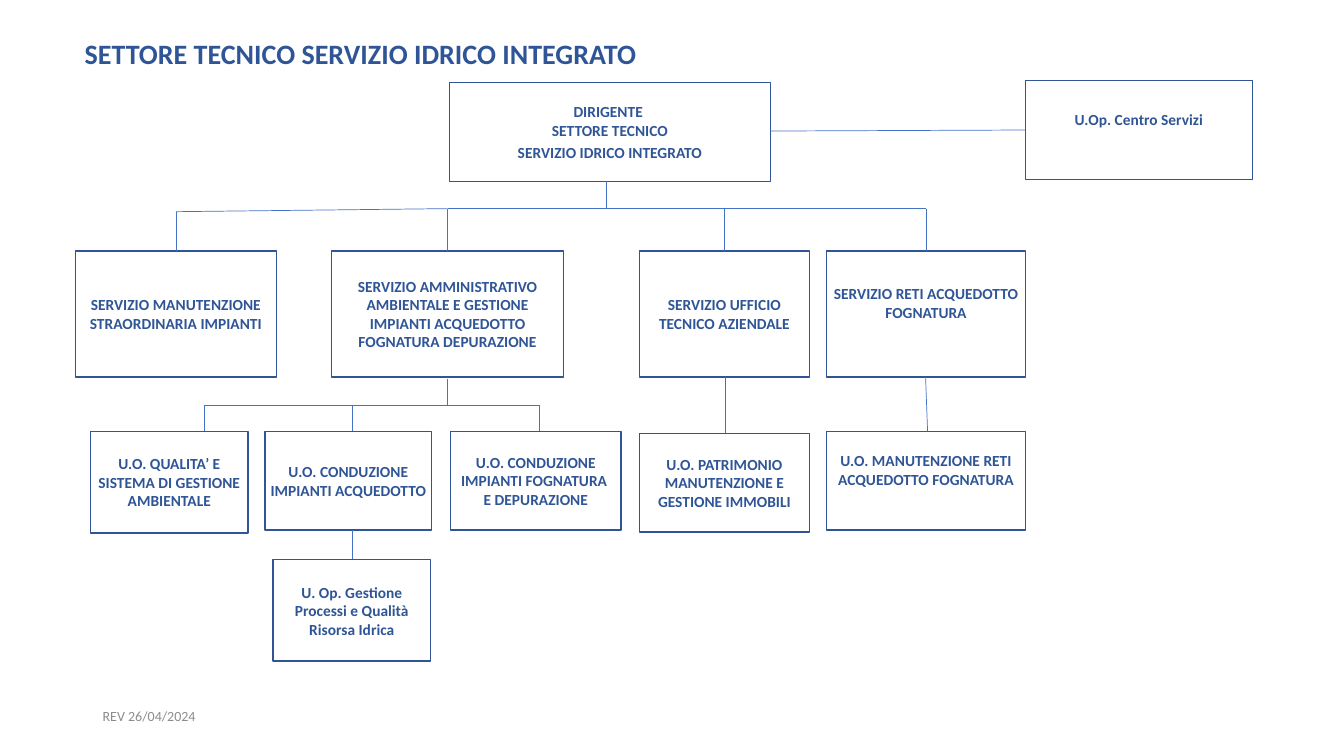
from dataclasses import dataclass

from pptx import Presentation
from pptx.dml.color import RGBColor
from pptx.enum.shapes import MSO_CONNECTOR as Connector, MSO_SHAPE as Shape
from pptx.enum.text import MSO_ANCHOR as Anchor, MSO_AUTO_SIZE as AutoSize, PP_ALIGN as Align
from pptx.oxml.ns import qn
from pptx.util import Inches, Pt


@dataclass(frozen=True)
class Theme:
    font: str = "Calibri"
    blue: RGBColor = RGBColor(0x2F, 0x55, 0x97)
    link: RGBColor = RGBColor(0x44, 0x72, 0xC4)
    grey: RGBColor = RGBColor(0x8C, 0x8C, 0x8C)
    white: RGBColor = RGBColor(0xFF, 0xFF, 0xFF)
    title_size: Pt = Pt(20)
    box_size: Pt = Pt(11)
    note_size: Pt = Pt(10)
    box_line: Pt = Pt(1)
    link_line: Pt = Pt(0.5)


THEME = Theme()
INSET = 0.05
RAISED = 0.27  # bottom inset that lifts the text above the middle


def set_values(target, values):
    for name, value in values.items():
        setattr(target, name, value)


def set_margins(frame, left, top, right, bottom):
    set_values(frame, {"margin_left": Inches(left), "margin_top": Inches(top),
                       "margin_right": Inches(right), "margin_bottom": Inches(bottom)})


def write(frame, text, size, color, bold=True, align=Align.LEFT, after=0):
    set_values(frame, {"text": text, "word_wrap": True,
                       "auto_size": AutoSize.NONE, "vertical_anchor": Anchor.MIDDLE})
    for paragraph in frame.paragraphs:
        set_values(paragraph, {"alignment": align, "space_after": Pt(after)})
        for run in paragraph.runs:
            set_values(run.font, {"name": THEME.font, "size": size, "bold": bold})
            run.font.color.rgb = color


def add_box(slide, box, text, bottom=INSET):
    shape = slide.shapes.add_shape(Shape.RECTANGLE, *map(Inches, box))
    shape.shadow.inherit = False
    shape.fill.solid()
    shape.fill.fore_color.rgb = THEME.white
    shape.line.color.rgb = THEME.blue
    shape.line.width = THEME.box_line
    write(shape.text_frame, text, THEME.box_size, THEME.blue, align=Align.CENTER, after=3)
    set_margins(shape.text_frame, INSET, INSET, INSET, bottom)


def add_link(slide, *ends):
    link = slide.shapes.add_connector(Connector.STRAIGHT, *map(Inches, ends))
    link.line.color.rgb = THEME.link
    link.line.width = THEME.link_line
    properties = link._element.spPr
    properties.append(properties.makeelement(qn("a:effectLst"), {}))


def add_title(slide, box):
    title = slide.shapes.title
    set_values(title, dict(zip(("left", "top", "width", "height"), map(Inches, box))))
    write(title.text_frame, "SETTORE TECNICO SERVIZIO IDRICO INTEGRATO",
          THEME.title_size, THEME.blue)
    set_margins(title.text_frame, 0.09, 0, 0, 0)


def add_management(slide, box):
    left, top, width, height = box
    add_box(slide, (left, top + 0.02, 3.18, height),
            "DIRIGENTE \vSETTORE TECNICO\nSERVIZIO IDRICO INTEGRATO")
    centre_left = left + width - 2.25
    add_box(slide, (centre_left, top, 2.25, height), "U.Op. Centro Servizi", RAISED)
    add_link(slide, left + 3.18, top + 0.5, centre_left, top + 0.49)


def add_services(slide, box):
    left, top, width, height = box
    bus = top - 0.42
    services = [  # offset, width, bottom inset, text
        (0, 1.99, INSET, "SERVIZIO MANUTENZIONE STRAORDINARIA IMPIANTI"),
        (2.54, 2.3, INSET, "SERVIZIO AMMINISTRATIVO AMBIENTALE E GESTIONE "
                           "IMPIANTI ACQUEDOTTO FOGNATURA DEPURAZIONE"),
        (5.59, 1.69, INSET, "SERVIZIO UFFICIO TECNICO AZIENDALE"),
        (7.45, 1.97, RAISED, "SERVIZIO RETI ACQUEDOTTO FOGNATURA"),
    ]
    centres = [left + offset + wide / 2 for offset, wide, _, _ in services]
    for centre, (offset, wide, bottom, text) in zip(centres, services):
        add_box(slide, (left + offset, top, wide, height), text, bottom)
        start = bus + 0.03 if offset == 0 else bus
        add_link(slide, centre, start, centre, top)
    # Bus and its feed from the management box
    add_link(slide, centres[0], bus + 0.03, centres[1], bus)
    add_link(slide, centres[1], bus, centres[-1], bus)
    add_link(slide, 6.01, bus - 0.27, 6.01, bus)


def add_units(slide, box):
    left, top, width, height = box
    bus = top - 0.26
    units = [  # offset, drop, width, height, bottom inset, text
        (0, 0, 1.56, 1.01, INSET, "U.O. QUALITA’ E SISTEMA DI GESTIONE AMBIENTALE"),
        (1.73, 0, 1.65, height, INSET, "U.O. CONDUZIONE IMPIANTI ACQUEDOTTO"),
        (3.57, 0, 1.69, height, INSET, "U.O. CONDUZIONE IMPIANTI FOGNATURA  E DEPURAZIONE"),
        (5.44, 0.02, 1.69, height, INSET, "U.O. PATRIMONIO MANUTENZIONE E GESTIONE IMMOBILI"),
        (7.3, 0, 1.97, height, RAISED, "U.O. MANUTENZIONE RETI ACQUEDOTTO FOGNATURA"),
        (1.81, 1.27, 1.56, 1.01, INSET, "U. Op. Gestione Processi e Qualità Risorsa Idrica"),
    ]
    for offset, drop, wide, high, bottom, text in units:
        add_box(slide, (left + offset, top + drop, wide, high), text, bottom)
    # Bus of the administrative service
    add_link(slide, left + 1.12, bus, left + 4.45, bus)
    add_link(slide, left + 3.54, bus - 0.26, left + 3.54, bus)
    for offset in (1.13, 2.59, 4.45):
        add_link(slide, left + offset, bus, left + offset, top)
    # Direct links
    add_link(slide, left + 2.59, top + height, left + 2.59, top + 1.27)
    add_link(slide, left + 6.29, top - 0.54, left + 6.29, top + 0.02)
    add_link(slide, left + 8.28, top - 0.54, left + 8.3, top)


def add_revision(slide, box):
    note = slide.shapes.add_textbox(*map(Inches, box))
    write(note.text_frame, "REV 26/04/2024", THEME.note_size, THEME.grey, bold=False)


def main():
    presentation = Presentation()
    set_values(presentation, {"slide_width": Inches(13.33), "slide_height": Inches(7.5)})
    slide = presentation.slides.add_slide(presentation.slide_layouts[5])
    add_title(slide, (0.75, 0.28, 11.81, 0.5))
    add_management(slide, (4.46, 0.8, 7.96, 0.98))
    add_services(slide, (0.75, 2.49, 9.42, 1.25))
    add_units(slide, (0.9, 4.28, 9.27, 0.98))
    add_revision(slide, (0.92, 6.86, 9.65, 0.49))
    presentation.save("out.pptx")


if __name__ == "__main__":
    main()
